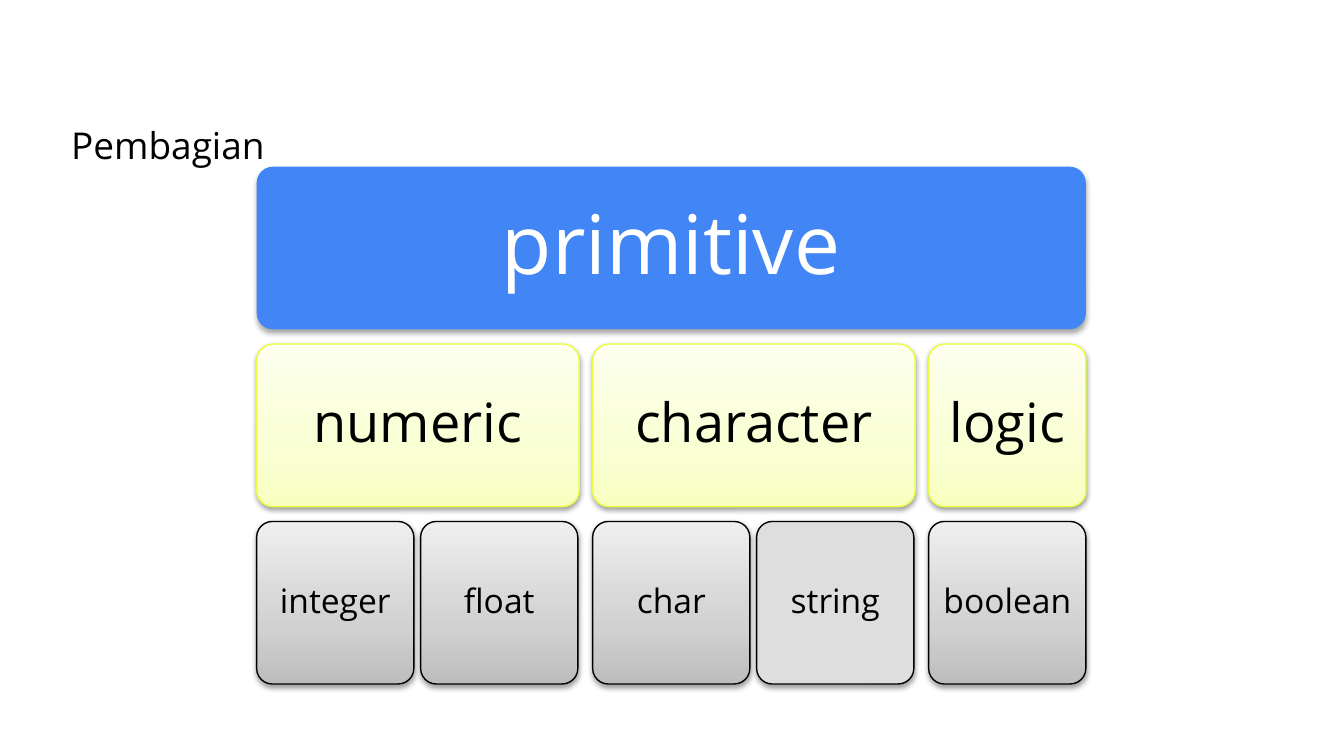
from lxml import etree
from pptx import Presentation
from pptx.dml.color import RGBColor
from pptx.enum.shapes import MSO_SHAPE
from pptx.enum.text import MSO_ANCHOR, MSO_AUTO_SIZE, PP_ALIGN
from pptx.oxml.ns import qn
from pptx.util import Inches, Pt

ROUND = MSO_SHAPE.ROUNDED_RECTANGLE
TOP, MIDDLE = MSO_ANCHOR.TOP, MSO_ANCHOR.MIDDLE
LEFT, CENTER = PP_ALIGN.LEFT, PP_ALIGN.CENTER
NO_FIT = MSO_AUTO_SIZE.NONE

FONT = "Open Sans"
BLACK = RGBColor(0x00, 0x00, 0x00)
WHITE = RGBColor(0xFF, 0xFF, 0xFF)
BLUE = RGBColor(0x42, 0x85, 0xF4)
LIME = RGBColor(0xED, 0xFE, 0x3B)
SILVER = RGBColor(0xDE, 0xDE, 0xDE)
# Gradient stops, from the bottom of a box to its top
YELLOWS = (
    (0, RGBColor(0xF7, 0xFF, 0xC0)),
    (35, RGBColor(0xF9, 0xFF, 0xD3)),
    (100, RGBColor(0xFD, 0xFF, 0xEE)),
)
GRAYS = (
    (0, RGBColor(0xBD, 0xBD, 0xBD)),
    (35, RGBColor(0xD1, 0xD1, 0xD1)),
    (100, RGBColor(0xEE, 0xEE, 0xEE)),
)

# Grid, in inches
GRID_X, GRID_Y = 1.91, 1.24
CELL, HIGH = 1.17, 1.21
STEP_X, STEP_Y = 1.22, 1.32
WIDE, BRANCH_X = 2.4, 2.5
PAD = 0.03

TREE = (
    ("numeric", ("integer", "float")),
    ("character", ("char", "string")),
    ("logic", ("boolean",)),
)


def put_text(frame, text, size, color=BLACK, align=CENTER, anchor=MIDDLE,
             inset=0.1, spacing=0.9):
    """Write one formatted paragraph into a text frame."""
    frame.word_wrap = True
    frame.auto_size = NO_FIT
    frame.vertical_anchor = anchor
    frame.margin_left = frame.margin_right = Inches(inset)
    frame.margin_top = frame.margin_bottom = Inches(inset)
    frame.text = text
    para = frame.paragraphs[0]
    para.alignment = align
    para.line_spacing = spacing
    font = para.runs[0].font
    font.name, font.size, font.color.rgb = FONT, Pt(size), color


def add_color(parent, color, alpha=None):
    node = etree.SubElement(parent, qn("a:srgbClr"), val=str(color))
    if alpha is not None:
        etree.SubElement(node, qn("a:alpha"), val=str(alpha * 1000))


def set_fill(shape, fill):
    """Fill with one color, or with a list of gradient stops."""
    if isinstance(fill, RGBColor):
        shape.fill.solid()
        shape.fill.fore_color.rgb = fill
        return
    shape.fill.gradient()
    shape.fill.gradient_angle = 90
    stops = shape.element.spPr.find(".//" + qn("a:gsLst"))
    for stop in list(stops):
        stops.remove(stop)
    for pos, color in fill:
        add_color(etree.SubElement(stops, qn("a:gs"), pos=str(pos * 1000)), color)


def set_shadow(shape, alpha, dist):
    shape.shadow.inherit = False
    effects = shape.element.spPr.find(qn("a:effectLst"))
    shadow = etree.SubElement(
        effects, qn("a:outerShdw"), blurRad=str(Pt(3.1)), dist=str(Pt(dist)),
        dir="5400000", rotWithShape="0")
    add_color(shadow, BLACK, alpha)


def add_box(group, text, x, row, width, fill, size, inset, line=None,
            color=BLACK, alpha=38, dist=1.6):
    """Draw a rounded box with its label on top."""
    y = GRID_Y + row * STEP_Y
    box = group.shapes.add_shape(
        ROUND, Inches(x), Inches(y), Inches(width), Inches(HIGH))
    box.adjustments[0] = 0.1
    set_fill(box, fill)
    if line is None:
        box.line.fill.background()
    else:
        box.line.color.rgb = line
        box.line.width = Pt(0.75)
    set_shadow(box, alpha, dist)
    label = group.shapes.add_textbox(
        Inches(x + PAD), Inches(y + PAD),
        Inches(width - 2 * PAD), Inches(HIGH - 2 * PAD))
    put_text(label.text_frame, text, size, color, inset=inset)


def add_title(slide, text):
    title = slide.shapes.title
    title.left, title.top = Inches(0.43), Inches(0.81)
    title.width, title.height = Inches(9.14), Inches(0.43)
    put_text(title.text_frame, text, 19.8, align=LEFT, anchor=TOP, spacing=1.0)


def add_tree(slide):
    group = slide.shapes.add_group_shape()
    # Root
    add_box(group, "primitive", GRID_X, 0, 2 * BRANCH_X + CELL, BLUE, 44, 0.18,
            color=WHITE, alpha=35, dist=1.8)
    # Branches, each with its leaves below
    for i, (name, leaves) in enumerate(TREE):
        x = GRID_X + i * BRANCH_X
        width = WIDE if len(leaves) > 1 else CELL
        add_box(group, name, x, 1, width, YELLOWS, 29, 0.12, LIME)
        for j, leaf in enumerate(leaves):
            fill = SILVER if leaf == "string" else GRAYS
            add_box(group, leaf, x + j * STEP_X, 2, CELL, fill, 18, 0.07, BLACK)


def main():
    deck = Presentation()
    # Widescreen, 16:9
    deck.slide_width = Inches(10)
    deck.slide_height = Inches(10 * 9 / 16)
    slide = deck.slides.add_slide(deck.slide_layouts[5])
    add_title(slide, "Pembagian")
    add_tree(slide)
    deck.save("out.pptx")


if __name__ == "__main__":
    main()
